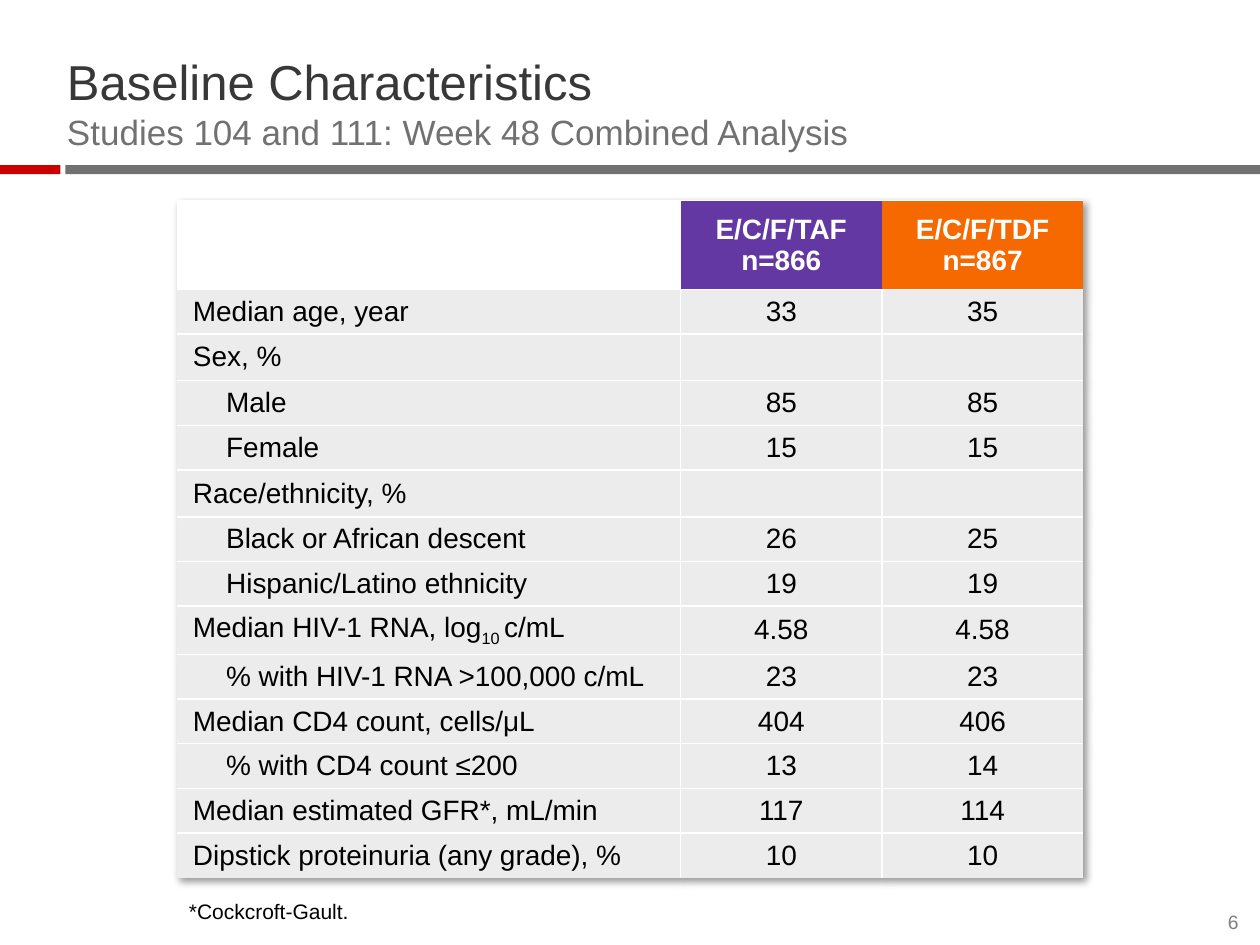
from dataclasses import dataclass

from lxml import etree
from pptx import Presentation, util as u
from pptx.dml import color
from pptx.enum import shapes, text as t
from pptx.oxml import ns

FONT = "Arial"
WHITE, BLACK, GREY, PALE = "FFFFFF", "000000", "717171", "ECECEC"


@dataclass
class Box:
    x: float
    y: float
    w: float
    h: float

    def size(self) -> list:
        return [u.Cm(v) for v in (self.x, self.y, self.w, self.h)]


@dataclass
class Row:
    label: str
    taf: str = ""
    tdf: str = ""
    sub: bool = False


ROWS = [
    Row("Median age, year", "33", "35"),
    Row("Sex, %"),
    Row("Male", "85", "85", True),
    Row("Female", "15", "15", True),
    Row("Race/ethnicity, %"),
    Row("Black or African descent", "26", "25", True),
    Row("Hispanic/Latino ethnicity", "19", "19", True),
    Row("Median HIV-1 RNA, log|10 |c/mL", "4.58", "4.58"),
    Row("% with HIV-1 RNA >100,000 c/mL", "23", "23", True),
    Row("Median CD4 count, cells/μL", "404", "406"),
    Row("% with CD4 count ≤200", "13", "14", True),
    Row("Median estimated GFR*, mL/min", "117", "114"),
    Row("Dipstick proteinuria (any grade), %", "10", "10"),
]


def rgb(code: str) -> color.RGBColor:
    return color.RGBColor.from_string(code)


def node(up, tag: str, **attrs):
    return etree.SubElement(up, ns.qn(tag), **attrs)


def write(para, text: str, size=16, tint=BLACK, bold=False, align=t.PP_ALIGN.LEFT) -> None:
    para.alignment = align
    for i, line in enumerate(text.split("\n")):
        if i:
            para.add_line_break()
            node(para._p[-1], "a:rPr", sz=str(size * 100))
        for j, part in enumerate(line.split("|")):
            if not part:
                continue
            run = para.add_run()
            run.text = part
            font = run.font
            font.name, font.size, font.bold = FONT, u.Pt(size), bold
            font.color.rgb = rgb(tint)
            if j % 2:
                run._r.get_or_add_rPr().set("baseline", "-25000")
    if not text:
        node(para._p, "a:endParaRPr", sz=str(size * 100))


def clear(frame) -> None:
    frame.margin_left = frame.margin_right = 0
    frame.margin_top = frame.margin_bottom = 0
    frame.vertical_anchor = t.MSO_ANCHOR.BOTTOM
    frame.auto_size = t.MSO_AUTO_SIZE.NONE
    frame.word_wrap = True


def bar(slide, box: Box, tint: str) -> None:
    shape = slide.shapes.add_shape(shapes.MSO_SHAPE.RECTANGLE, *box.size())
    shape.shadow.inherit = False
    shape.fill.solid()
    shape.fill.fore_color.rgb = rgb(tint)
    shape.line.fill.background()


def edge(cell, sides: dict) -> None:
    props = cell._tc.get_or_add_tcPr()
    for i, side in enumerate("LRTB"):
        width = sides.get(side, 0)
        line = node(props, f"a:ln{side}", w=str(u.Pt(width)))
        if width:
            node(node(line, "a:solidFill"), "a:srgbClr", val=WHITE)
        else:
            node(line, "a:noFill")
        props.insert(i, line)


def fill(cell, text: str, back: str, sides: dict, left=0.33, **style) -> None:
    cell.fill.solid()
    cell.fill.fore_color.rgb = rgb(back)
    cell.vertical_anchor = t.MSO_ANCHOR.MIDDLE
    cell.margin_left, cell.margin_right = u.Cm(left), u.Cm(0.33)
    write(cell.text_frame.paragraphs[0], text, **style)
    edge(cell, sides)


def shade(table) -> None:
    props = table._tbl.tblPr
    glow = etree.Element(ns.qn("a:effectLst"))
    props.insert(0, glow)
    drop = node(glow, "a:outerShdw", blurRad="50800", dist="38100",
                dir="2700000", algn="tl", rotWithShape="0")
    node(node(drop, "a:srgbClr", val=BLACK), "a:alpha", val="40000")


def grid(slide, box: Box) -> None:
    table = slide.shapes.add_table(len(ROWS) + 1, 3, *box.size()).table
    table.horz_banding = table.first_row = False
    shade(table)
    for col, width in zip(table.columns, (10.16, 4.06, 4.06)):
        col.width = u.Cm(width)
    for i, row in enumerate(table.rows):
        row.height = u.Cm(0.9 if i else 1.78)

    heads = [("", WHITE), ("E/C/F/TAF\nn=866", "6338A2"), ("E/C/F/TDF\nn=867", "F66900")]
    for c, (text, back) in enumerate(heads):
        fill(table.cell(0, c), text, back, {"T": 0.75, "B": 0.75},
             tint=WHITE, bold=True, align=t.PP_ALIGN.CENTER)

    for r, row in enumerate(ROWS, 1):
        for c, text in enumerate((row.label, row.taf, row.tdf)):
            sides = {"L": int(c > 0), "R": int(c < 2),
                     "T": 1 if r > 1 else 0.75, "B": int(r < len(ROWS))}
            fill(table.cell(r, c), text, PALE, sides,
                 left=1 if row.sub and c == 0 else 0.33,
                 align=t.PP_ALIGN.CENTER if c else t.PP_ALIGN.LEFT)


def main() -> None:
    deck = Presentation()
    deck.slide_width, deck.slide_height = u.Cm(25.4), u.Cm(19.05)
    slide = deck.slides.add_slide(deck.slide_layouts[5])
    bar(slide, Box(1.32, 3.33, 24.08, 0.18), GREY)
    bar(slide, Box(0, 3.33, 1.22, 0.18), "CC0000")

    title = slide.shapes.title
    title.left, title.top, title.width, title.height = Box(1.35, 1.19, 22.86, 1.88).size()
    clear(title.text_frame)
    head = title.text_frame.paragraphs[0]
    write(head, "Baseline Characteristics\n", size=28, tint="383838")
    write(head, "Studies 104 and 111: Week 48 Combined Analysis", size=20, tint=GREY)

    grid(slide, Box(3.56, 4.05, 18.28, 13.48))

    note = slide.shapes.add_textbox(*Box(3.56, 17.98, 3.89, 0.76).size()).text_frame
    note.word_wrap = False
    write(note.paragraphs[0], "*Cockcroft-Gault.", size=12)

    page = slide.shapes.add_textbox(*Box(24.28, 18.36, 0.69, 0.46).size()).text_frame
    clear(page)
    write(page.paragraphs[0], "6", size=11, tint="7F7F7F", align=t.PP_ALIGN.RIGHT)
    deck.save("out.pptx")


if __name__ == "__main__":
    main()
